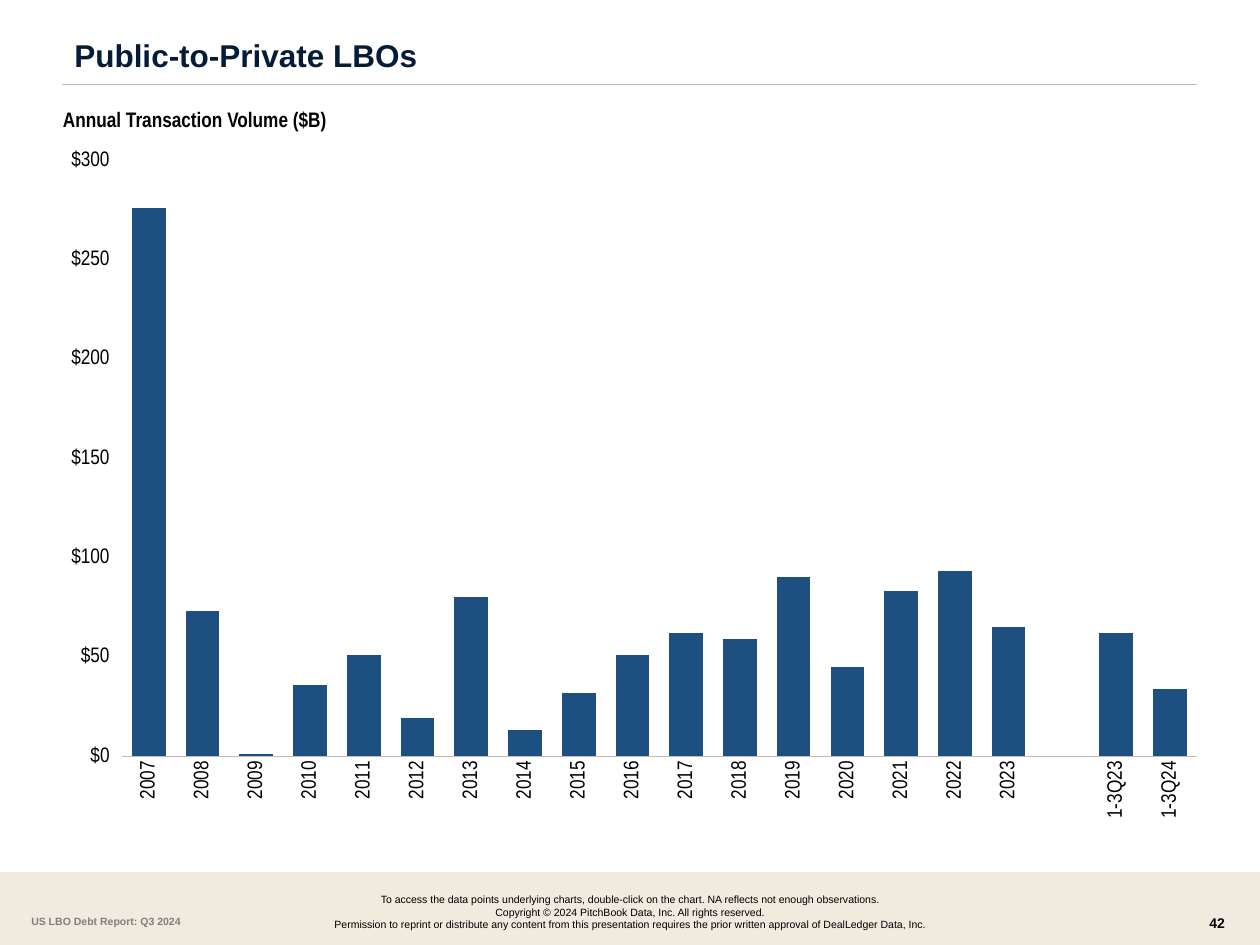
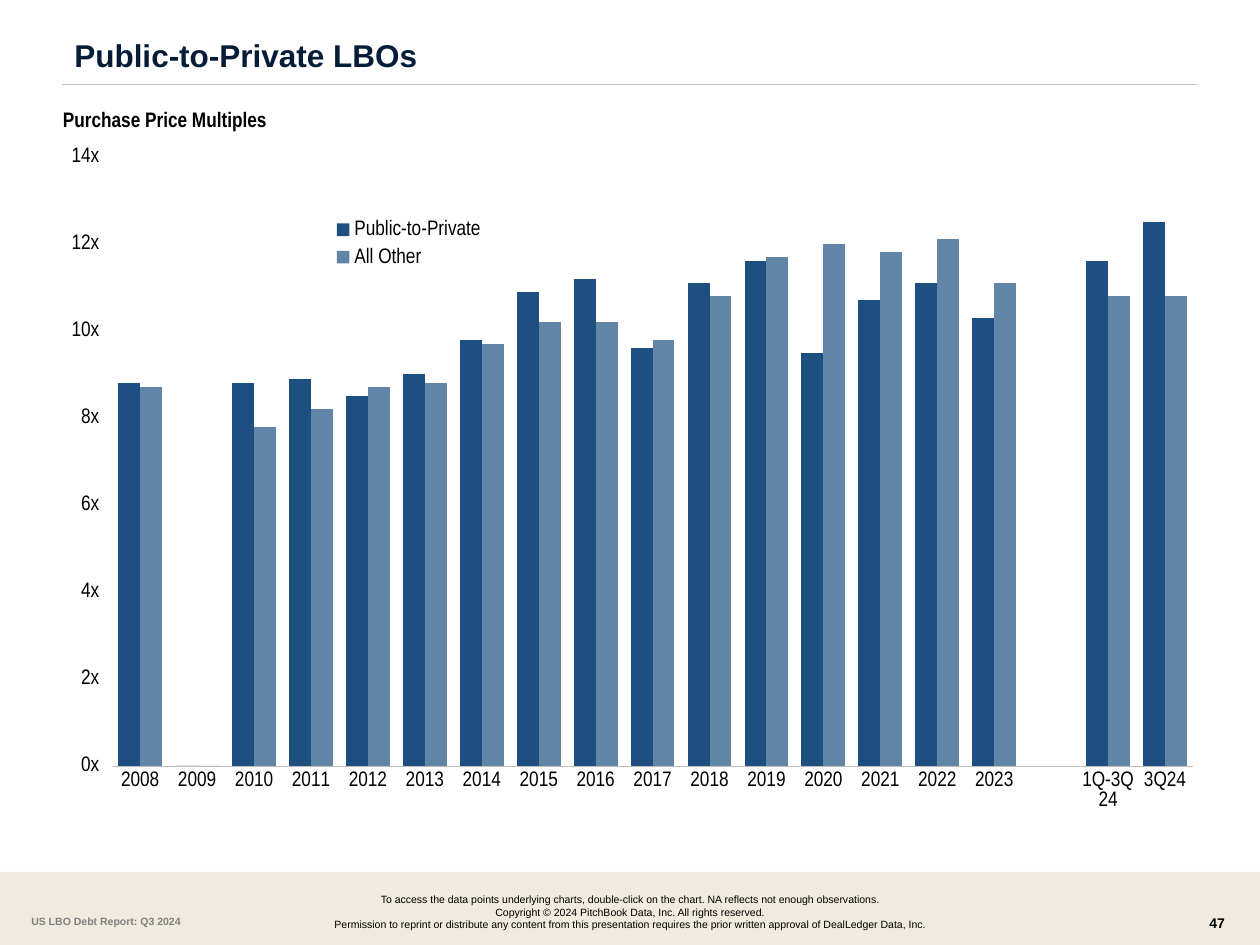
from dataclasses import dataclass

from lxml import etree
from pptx import Presentation
from pptx.chart.data import CategoryChartData
from pptx.dml.color import RGBColor
from pptx.enum.chart import XL_CHART_TYPE as ChartType
from pptx.enum.chart import XL_LEGEND_POSITION as LegendPosition
from pptx.enum.chart import XL_TICK_MARK as TickMark
from pptx.enum.shapes import MSO_CONNECTOR as Connector
from pptx.enum.shapes import MSO_SHAPE as Shape
from pptx.enum.text import MSO_ANCHOR as Anchor
from pptx.enum.text import MSO_AUTO_SIZE as AutoSize
from pptx.enum.text import PP_ALIGN as Align
from pptx.oxml import parse_xml
from pptx.oxml.ns import nsdecls, qn
from pptx.util import Inches, Pt


@dataclass(frozen=True)
class Theme:
    white: str = "FFFFFF"
    sand: str = "F0EBDE"
    rule: str = "C0BCB2"
    navy: str = "051C38"
    black: str = "000000"
    gray: str = "7F7F7F"
    series: tuple = ("1D5080", "6185A6")
    text_font: str = "Arial"
    chart_font: str = "Arial Narrow"
    title_size: float = 18
    chart_size: float = 12
    number_size: float = 8
    footer_size: float = 6


@dataclass(frozen=True)
class Box:
    left: float
    top: float
    width: float
    height: float

    def inside(self, left, top, width, height):
        return Box(self.left + left, self.top + top, width, height)

    def lengths(self):
        return [Inches(side) for side in (self.left, self.top, self.width, self.height)]


THEME = Theme()
HEADER = Box(0, 0, 10, 0.92)
CONTENT = Box(0.5, 0.77, 9, 5.81)
FOOTER = Box(0, 6.92, 10, 0.58)

TITLE = "Public-to-Private LBOs"
REPORT = "US LBO Debt Report: Q3 2024"
NOTICE = (
    "To access the data points underlying charts, double-click on the chart. "
    "NA reflects not enough observations.",
    "Copyright © 2024 PitchBook Data, Inc. All rights reserved.",
    "Permission to reprint or distribute any content from this presentation "
    "requires the prior written approval of DealLedger Data, Inc.",
)


def style_font(font, size, color, name=THEME.text_font, bold=False):
    font.name = name
    font.size = Pt(size)
    font.bold = bold
    font.color.rgb = RGBColor.from_string(color)


def add_band(page, box, color):
    band = page.shapes.add_shape(Shape.RECTANGLE, *box.lengths())
    band.shadow.inherit = False
    band.fill.solid()
    band.fill.fore_color.rgb = RGBColor.from_string(color)
    band.line.fill.background()


def add_text(page, box, lines, size, color, align=Align.LEFT, **font):
    frame = page.shapes.add_textbox(*box.lengths()).text_frame
    frame.word_wrap = True
    frame.text = "\n".join(lines)
    for para in frame.paragraphs:
        para.alignment = align
        style_font(para.font, size, color, **font)
    return frame


def add_header(page, box):
    add_band(page, box, THEME.white)
    left, right, level = (Inches(n) for n in (box.left + 0.49, box.left + 9.5, box.top + 0.67))
    rule = page.shapes.add_connector(Connector.STRAIGHT, left, level, right, level)
    rule.line.color.rgb = RGBColor.from_string(THEME.rule)
    rule.line.width = Pt(0.75)
    etree.SubElement(rule.element.spPr, qn("a:effectLst"))

    title = page.shapes.title
    title.element.getparent().append(title.element)  # in front of the header band
    title.left, title.top, title.width, title.height = box.inside(0.49, 0.27, 7.68, 0.31).lengths()
    frame = title.text_frame
    frame.text = TITLE
    frame.auto_size = AutoSize.NONE
    frame.vertical_anchor = Anchor.TOP
    para = frame.paragraphs[0]
    para.alignment = Align.LEFT
    para.line_spacing = 0.9
    style_font(para.font, THEME.title_size, THEME.navy, bold=True)


def add_footer(page, box, number):
    add_band(page, box, THEME.sand)
    add_text(page, box.inside(9.5, 0.29, 0.42, 0.25), [number],
             THEME.number_size, THEME.black, bold=True)
    add_text(page, box.inside(0.84, 0.12, 8.32, 0.4), NOTICE,
             THEME.footer_size, THEME.black, Align.CENTER)
    add_text(page, box.inside(0.15, 0.29, 1.54, 0.2), [REPORT],
             THEME.footer_size, THEME.gray, bold=True)


def manual_layout(x, y, width, height, inner=False):
    target = '<c:layoutTarget val="inner"/>' if inner else ""
    return parse_xml(
        f'<c:layout {nsdecls("c")}><c:manualLayout>{target}'
        '<c:xMode val="edge"/><c:yMode val="edge"/>'
        f'<c:x val="{x}"/><c:y val="{y}"/><c:w val="{width}"/><c:h val="{height}"/>'
        "</c:manualLayout></c:layout>")


def place_plot(chart, area):
    plot_area = chart.element.find(".//" + qn("c:plotArea"))
    for layout in plot_area.findall(qn("c:layout")):
        plot_area.remove(layout)
    plot_area.insert(0, manual_layout(*area, inner=True))


def add_legend(chart, area):
    chart.has_legend = True
    legend = chart.legend
    legend.position = LegendPosition.CORNER
    legend.include_in_layout = False
    style_font(legend.font, THEME.chart_size, THEME.black, THEME.chart_font)
    element = chart.element.find(".//" + qn("c:legend"))
    for layout in element.findall(qn("c:layout")):
        element.remove(layout)
    element.find(qn("c:legendPos")).addnext(manual_layout(*area))


def style_axes(chart, top, step, number_format, label_turn):
    values = chart.value_axis
    values.minimum_scale, values.maximum_scale, values.major_unit = 0, top, step
    values.has_major_gridlines = False
    values.major_tick_mark = TickMark.OUTSIDE
    values.format.line.fill.background()
    values.tick_labels.number_format = number_format
    values.tick_labels.number_format_is_linked = False

    categories = chart.category_axis
    categories.major_tick_mark = TickMark.NONE
    categories.format.line.color.rgb = RGBColor.from_string(THEME.rule)
    categories.format.line.width = Pt(0.25)
    for axis in (values, categories):
        style_font(axis.tick_labels.font, THEME.chart_size, THEME.black, THEME.chart_font)
    body = chart.element.find(f".//{qn('c:catAx')}/{qn('c:txPr')}/{qn('a:bodyPr')}")
    body.set("rot", str(label_turn * 60000))
    body.set("vert", "horz")


def add_column_chart(page, box, kind, categories, series, plot, axes, legend=None):
    data = CategoryChartData()
    data.categories = categories
    for name, values in series.items():
        data.add_series(name, values)
    chart = page.shapes.add_chart(kind, *box.lengths(), data).chart
    chart.has_title = False
    chart.has_legend = False
    style_font(chart.font, THEME.chart_size, THEME.black, THEME.chart_font)
    columns = chart.plots[0]
    columns.vary_by_categories = False
    columns.gap_width = 60
    columns.overlap = 100 if kind == ChartType.COLUMN_STACKED else 0
    for entry, color in zip(columns.series, THEME.series):
        entry.format.fill.solid()
        entry.format.fill.fore_color.rgb = RGBColor.from_string(color)
    style_axes(chart, **axes)
    place_plot(chart, plot)
    if legend:
        add_legend(chart, legend)


def add_content(page, box, heading, **chart):
    frame = add_text(page, box.inside(0, 0, 4.8, 0.31), [heading], THEME.chart_size,
                     THEME.black, name=THEME.chart_font, bold=True)
    frame.margin_left = 0
    frame.vertical_anchor = Anchor.MIDDLE
    frame.paragraphs[0].line_spacing = 1.2
    add_column_chart(page, box.inside(0, 0.31, box.width, box.height - 0.31), **chart)


def add_chart_page(deck, number, heading, **chart):
    page = deck.slides.add_slide(deck.slide_layouts.get_by_name("Title Only"))
    add_header(page, HEADER)
    add_footer(page, FOOTER, number)
    add_content(page, CONTENT, heading, **chart)


def years(first, last):
    return [str(year) for year in range(first, last + 1)]


def main():
    deck = Presentation()
    deck.slide_width, deck.slide_height = Inches(10), Inches(7.5)
    add_chart_page(
        deck, "42", "Annual Transaction Volume ($B)",
        kind=ChartType.COLUMN_STACKED,
        categories=years(2007, 2023) + ["", "1-3Q23", "1-3Q24"],
        series={"Series 1": [276, 73, 1, 36, 51, 19, 80, 13, 32, 51, 62, 59, 90,
                             45, 83, 93, 65, None, 62, 34]},
        plot=(0.052, 0.035, 0.948, 0.86),
        axes=dict(top=300, step=50, number_format='"$"#,##0', label_turn=-90),
    )
    add_chart_page(
        deck, "47", "Purchase Price Multiples",
        kind=ChartType.COLUMN_CLUSTERED,
        categories=years(2008, 2023) + ["", "1Q-3Q24", "3Q24"],
        series={
            "Public-to-Private": [8.8, 0, 8.8, 8.9, 8.5, 9, 9.8, 10.9, 11.2, 9.6, 11.1,
                                  11.6, 9.5, 10.7, 11.1, 10.3, None, 11.6, 12.5],
            "All Other": [8.7, 0, 7.8, 8.2, 8.7, 8.8, 9.7, 10.2, 10.2, 9.8, 10.8,
                          11.7, 12, 11.8, 12.1, 11.1, None, 10.8, 10.8],
        },
        plot=(0.043, 0.03, 0.954, 0.879),
        axes=dict(top=14, step=2, number_format=r"0\x", label_turn=0),
        legend=(0.23, 0.11, 0.15, 0.09),
    )
    deck.save("out.pptx")


if __name__ == "__main__":
    main()
